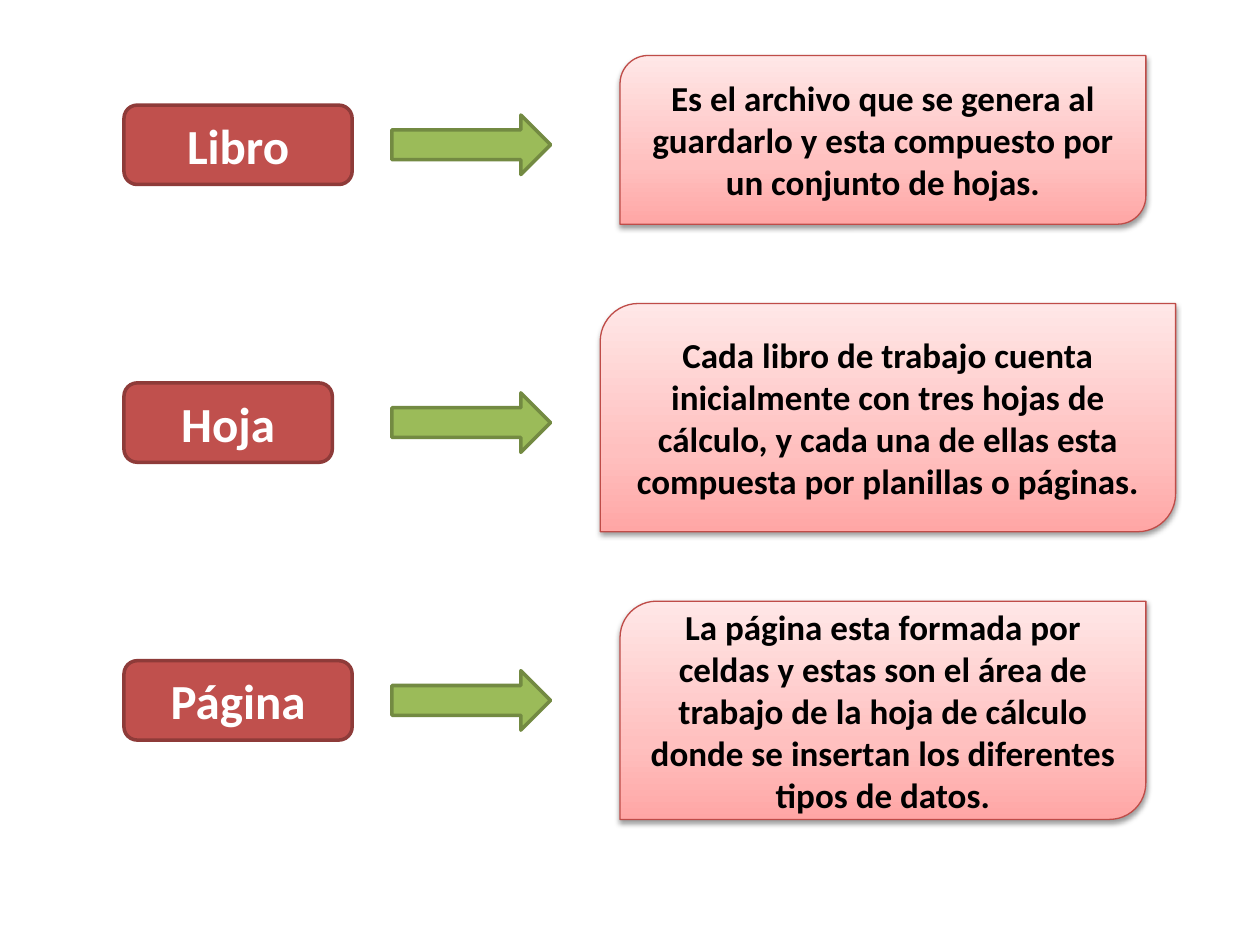
from copy import deepcopy

from lxml import etree
from pptx import Presentation
from pptx.dml.color import RGBColor
from pptx.enum.shapes import MSO_SHAPE
from pptx.enum.text import MSO_ANCHOR, PP_ALIGN
from pptx.oxml.ns import qn
from pptx.util import Cm, Pt

ROUNDED = MSO_SHAPE.ROUNDED_RECTANGLE
DIAGONAL = MSO_SHAPE.ROUND_2_DIAG_RECTANGLE
ARROW = MSO_SHAPE.RIGHT_ARROW
CENTER = PP_ALIGN.CENTER
MIDDLE = MSO_ANCHOR.MIDDLE

# term, term width, definition, definition box (left, top, width, height) in cm
CONCEPTS = [
    ("Libro", 4.6,
     "Es el archivo que se genera al guardarlo y esta compuesto por un conjunto de hojas.",
     (12.5, 1.12, 10.6, 3.4)),
    ("Hoja", 4.2,
     "Cada libro de trabajo cuenta inicialmente con tres hojas de cálculo, "
     "y cada una de ellas esta compuesta por planillas o páginas.",
     (12.1, 6.12, 11.6, 4.6)),
    ("Página", 4.6,
     "La página esta formada por celdas y estas son el área de trabajo de la hoja "
     "de cálculo donde se insertan los diferentes tipos de datos.",
     (12.5, 12.12, 10.6, 4.4)),
]
GRADIENT = [(0, "FFA6A5"), (0.35, "FFC0BF"), (1, "FFE7E7")]

FIRST_CENTER, ROW_STEP = 2.92, 5.6
TERM_LEFT, TERM_HEIGHT = 2.5, 1.6
ARROW_LEFT, ARROW_WIDTH, ARROW_HEIGHT = 7.9, 3.2, 1.2


def rgb(color):
    return RGBColor.from_string(color)


def add_box(slide, kind, box, line_color, line_width, fill_color=None):
    shape = slide.shapes.add_shape(kind, *(Cm(length) for length in box))
    shape.shadow.inherit = False
    shape.line.color.rgb = rgb(line_color)
    shape.line.width = Pt(line_width)
    if fill_color:
        shape.fill.solid()
        shape.fill.fore_color.rgb = rgb(fill_color)
    return shape


def write(shape, text, size, color):
    frame = shape.text_frame
    frame.word_wrap = True
    frame.vertical_anchor = MIDDLE
    frame.text = text
    paragraph = frame.paragraphs[0]
    paragraph.alignment = CENTER
    font = paragraph.runs[0].font
    font.name, font.size, font.bold = "Calibri", Pt(size), True
    font.color.rgb = rgb(color)


def fill_gradient(shape):
    """Fill from the first gradient colour at the bottom to the last at the top."""
    fill = shape.fill
    fill.gradient()
    fill.gradient_angle = 90
    stop_list = shape._element.spPr.find(".//" + qn("a:gsLst"))
    stop_list.append(deepcopy(stop_list[0]))
    for stop, (position, color) in zip(fill.gradient_stops, GRADIENT):
        stop.position = position
        stop.color.rgb = rgb(color)


def add_soft_shadow(shape):
    effects = shape._element.spPr.find(qn("a:effectLst"))
    shadow = etree.SubElement(effects, qn("a:outerShdw"), blurRad="40000",
                              dist="20000", dir="5400000", rotWithShape="0")
    color = etree.SubElement(shadow, qn("a:srgbClr"), val="000000")
    etree.SubElement(color, qn("a:alpha"), val="38000")


presentation = Presentation()
presentation.slide_width, presentation.slide_height = Cm(25.4), Cm(19.05)
slide = presentation.slides.add_slide(presentation.slide_layouts[6])

for row, (term, term_width, definition, definition_box) in enumerate(CONCEPTS):
    center = FIRST_CENTER + row * ROW_STEP

    term_box = (TERM_LEFT, center - TERM_HEIGHT / 2, term_width, TERM_HEIGHT)
    label = add_box(slide, ROUNDED, term_box, "8E3B39", 2, "C0504D")
    write(label, term, 28, "FFFFFF")

    arrow_box = (ARROW_LEFT, center - ARROW_HEIGHT / 2, ARROW_WIDTH, ARROW_HEIGHT)
    add_box(slide, ARROW, arrow_box, "738A42", 2, "9BBB59")

    card = add_box(slide, DIAGONAL, definition_box, "BF4C48", 0.75)
    fill_gradient(card)
    add_soft_shadow(card)
    write(card, definition, 20, "000000")

presentation.save("out.pptx")
